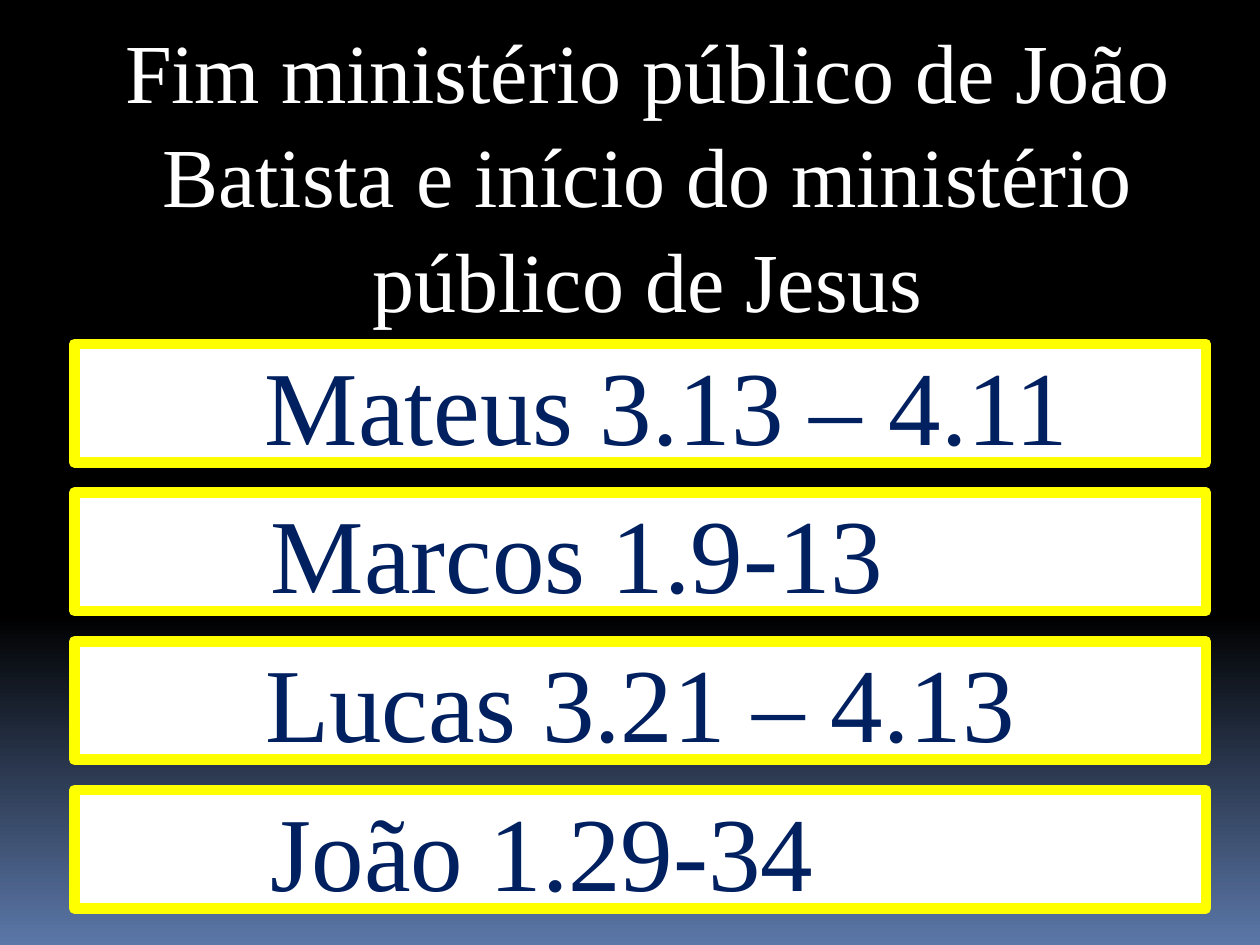
from typing import NamedTuple

from pptx import Presentation
from pptx.dml.color import RGBColor
from pptx.enum.shapes import MSO_SHAPE
from pptx.enum.text import MSO_ANCHOR, MSO_AUTO_SIZE, PP_ALIGN
from pptx.util import Inches, Pt

RECT = MSO_SHAPE.RECTANGLE
TOP, MIDDLE = MSO_ANCHOR.TOP, MSO_ANCHOR.MIDDLE
LEFT, CENTER = PP_ALIGN.LEFT, PP_ALIGN.CENTER
NO_FIT = MSO_AUTO_SIZE.NONE

BLACK = RGBColor(0x00, 0x00, 0x00)
SLATE = RGBColor(0x5B, 0x77, 0xA8)
WHITE = RGBColor(0xFF, 0xFF, 0xFF)
YELLOW = RGBColor(0xFF, 0xFF, 0x00)
NAVY = RGBColor(0x00, 0x20, 0x60)

FONT = "Times New Roman"
TITLE = "Fim ministério público de João Batista e início do ministério público de Jesus"
FIRST_TOP, PITCH = 2.73, 1.18


class Passage(NamedTuple):
    text: str
    align: PP_ALIGN
    inset: float


PASSAGES = [
    Passage("Mateus 3.13 – 4.11", CENTER, 0.52),
    Passage("Marcos 1.9-13", LEFT, 1.56),
    Passage("Lucas 3.21 – 4.13", CENTER, 0.1),
    Passage("João 1.29-34", LEFT, 1.56),
]


def write(sp, text: str, size: int, color: RGBColor, align: PP_ALIGN) -> None:
    tf = sp.text_frame
    tf.word_wrap = True
    tf.auto_size = NO_FIT
    p = tf.paragraphs[0]
    p.text = text
    p.alignment = align
    p.font.name = FONT
    p.font.size = Pt(size)
    p.font.color.rgb = color


def paint_background(s) -> None:
    fill = s.background.fill
    fill.gradient()
    fill.gradient_angle = 270
    for stop, position, color in zip(fill.gradient_stops, (0.65, 1), (BLACK, SLATE)):
        stop.position = position
        stop.color.rgb = color


def add_title(s) -> None:
    sp = s.shapes.title
    sp.left, sp.top = Inches(0.28), Inches(0)
    sp.width, sp.height = Inches(9.72), Inches(2.52)
    write(sp, TITLE, 48, WHITE, CENTER)
    tf = sp.text_frame
    tf.vertical_anchor = TOP
    tf.margin_top = Inches(0.12)
    tf.paragraphs[0].line_spacing = 1.04


def add_passage(s, passage: Passage, top: float) -> None:
    sp = s.shapes.add_shape(RECT, Inches(0.59), Inches(top), Inches(8.98), Inches(0.94))
    sp.shadow.inherit = False
    sp.fill.solid()
    sp.fill.fore_color.rgb = WHITE
    sp.line.color.rgb = YELLOW
    sp.line.width = Pt(6)
    write(sp, passage.text, 60, NAVY, passage.align)
    sp.text_frame.vertical_anchor = MIDDLE
    sp.text_frame.margin_left = Inches(passage.inset)


def main() -> None:
    prs = Presentation()
    prs.slide_width, prs.slide_height = Inches(10), Inches(7.5)
    s = prs.slides.add_slide(prs.slide_layouts[5])
    paint_background(s)
    add_title(s)
    for i, passage in enumerate(PASSAGES):
        add_passage(s, passage, FIRST_TOP + i * PITCH)
    prs.save("out.pptx")


if __name__ == "__main__":
    main()
